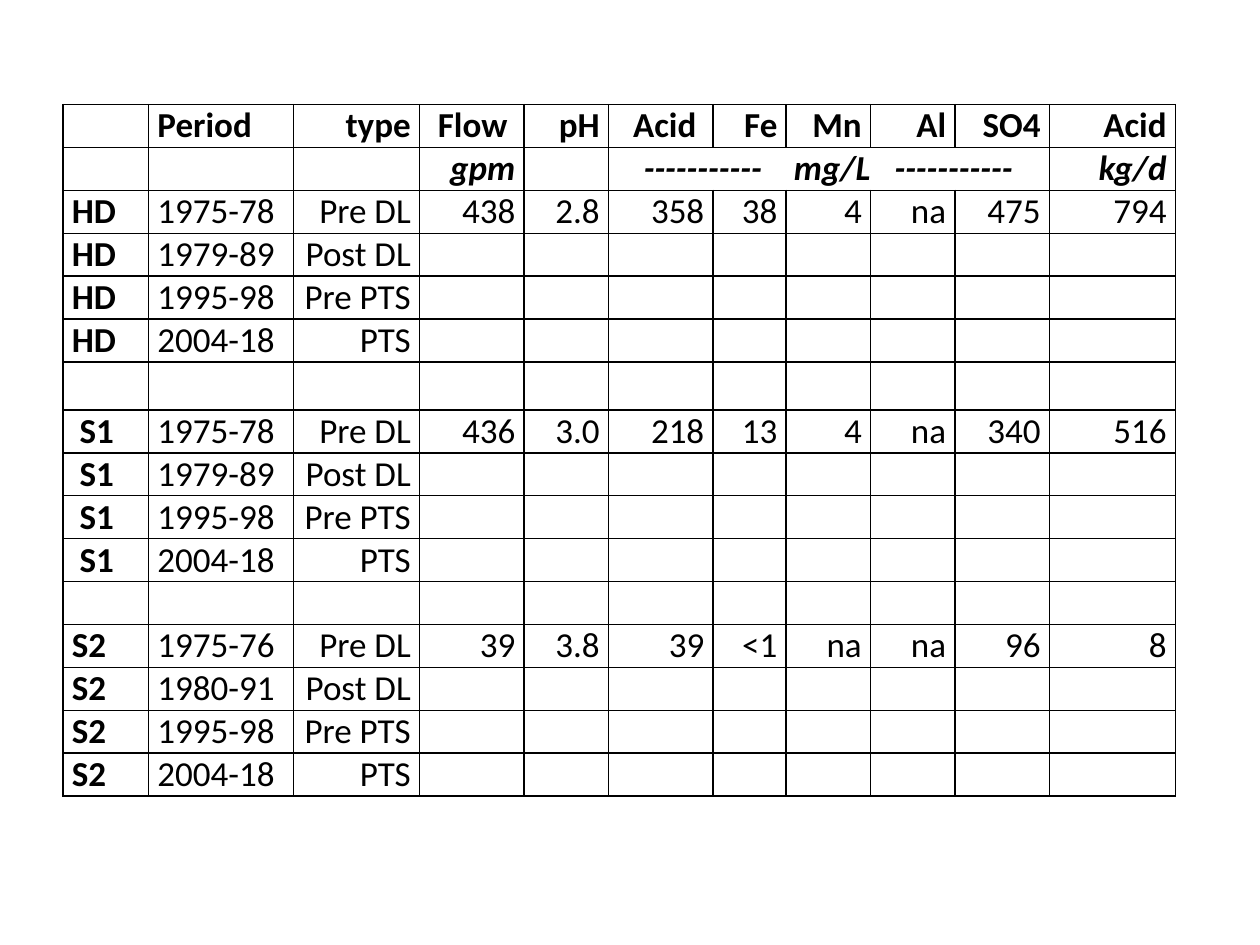
import dataclasses
import itertools

import pptx
import pptx.dml.color
import pptx.enum.text
import pptx.oxml
import pptx.oxml.ns
import pptx.util

ALIGN = pptx.enum.text.PP_ALIGN
INK = "000000"
LEFT, TOP = 0.5, 0.83
WIDTHS = [0.68, 1.15, 1, 0.83, 0.67, 0.83, 0.58, 0.67, 0.67, 0.75, 1]
ROW, GAP = 0.34, 0.38
TYPES = ["Pre DL", "Post DL", "Pre PTS", "PTS"]
HEAD = ["", "Period", "type", "Flow ", "pH", "Acid ", "Fe", "Mn", "Al", "SO4", "Acid"]
DASH = "-" * 11
UNITS = {3: "gpm", 5: f"{DASH}\tmg/L\t{DASH}", 10: "kg/d"}
SPAN = (5, 9)
INDENT = 0.28
STOPS = [1.19, 1.99]


@dataclasses.dataclass
class Site:
    name: str
    years: list[str]
    values: list[str]

    def rows(self) -> list[list[str]]:
        rows = [[self.name, year, kind] for year, kind in zip(self.years, TYPES)]
        rows[0] += self.values
        return rows


SITES = [
    Site("HD", ["1975-78", "1979-89", "1995-98", "2004-18"],
         ["438", "2.8", "358", "38", "4", "na", "475", "794"]),
    Site(" S1", ["1975-78", "1979-89", "1995-98", "2004-18"],
         ["436", "3.0", "218", "13", "4", "na", "340", "516"]),
    Site("S2", ["1975-76", "1980-91", "1995-98", "2004-18"],
         ["39", "3.8", "39", "<1", "na", "na", "96", "8"]),
]


def color(code: str) -> pptx.dml.color.RGBColor:
    return pptx.dml.color.RGBColor.from_string(code)


def frame(cell) -> None:
    props = cell._tc.get_or_add_tcPr()
    for side in ("L", "R", "T", "B"):
        props.append(pptx.oxml.parse_xml(
            f'<a:ln{side} {pptx.oxml.ns.nsdecls("a")} w="{pptx.util.Pt(1)}">'
            f'<a:solidFill><a:srgbClr val="{INK}"/></a:solidFill></a:ln{side}>'))
    cell.fill.background()
    cell.margin_left = cell.margin_right = pptx.util.Inches(0.07)
    cell.margin_top = cell.margin_bottom = 0


def write(cell, text: str, align, bold: bool, italic: bool) -> None:
    para = cell.text_frame.paragraphs[0]
    para.text = text
    para.alignment = align
    if "\t" in text:
        stops = "".join(f'<a:tab pos="{pptx.util.Inches(x)}" algn="l"/>' for x in STOPS)
        para._p.get_or_add_pPr().append(pptx.oxml.parse_xml(
            f'<a:tabLst {pptx.oxml.ns.nsdecls("a")}>{stops}</a:tabLst>'))
    font = para.font
    font.name, font.size = "Calibri", pptx.util.Pt(20)
    font.bold, font.italic = bold, italic
    font.color.rgb = color(INK)


def main() -> None:
    deck = pptx.Presentation()
    deck.slide_width, deck.slide_height = pptx.util.Inches(10), pptx.util.Inches(7.5)
    slide = deck.slides.add_slide(deck.slide_layouts[6])

    rows = [HEAD, [UNITS.get(c, "") for c in range(len(WIDTHS))]]
    for site in SITES:
        rows += site.rows() + [[]]
    rows.pop()
    tall = 2 + len(TYPES)
    highs = [GAP if r == tall else ROW for r in range(len(rows))]

    table = slide.shapes.add_table(
        len(rows), len(WIDTHS), *map(pptx.util.Inches, (LEFT, TOP, sum(WIDTHS), sum(highs)))).table
    table.first_row = table.horz_banding = False
    for col, width in zip(table.columns, WIDTHS):
        col.width = pptx.util.Inches(width)
    for row, high in zip(table.rows, highs):
        row.height = pptx.util.Inches(high)

    for r, c in itertools.product(range(len(rows)), range(len(WIDTHS))):
        cell = table.cell(r, c)
        frame(cell)
        text = rows[r][c] if c < len(rows[r]) else ""
        align = ALIGN.LEFT if c < 2 or "\t" in text else ALIGN.RIGHT
        write(cell, text, align, r < 2 or c == 0, r == 1)

    first, last = SPAN
    unit = table.cell(1, first)
    unit.merge(table.cell(1, last))
    unit.margin_left = pptx.util.Inches(INDENT)
    deck.save("out.pptx")


if __name__ == "__main__":
    main()
